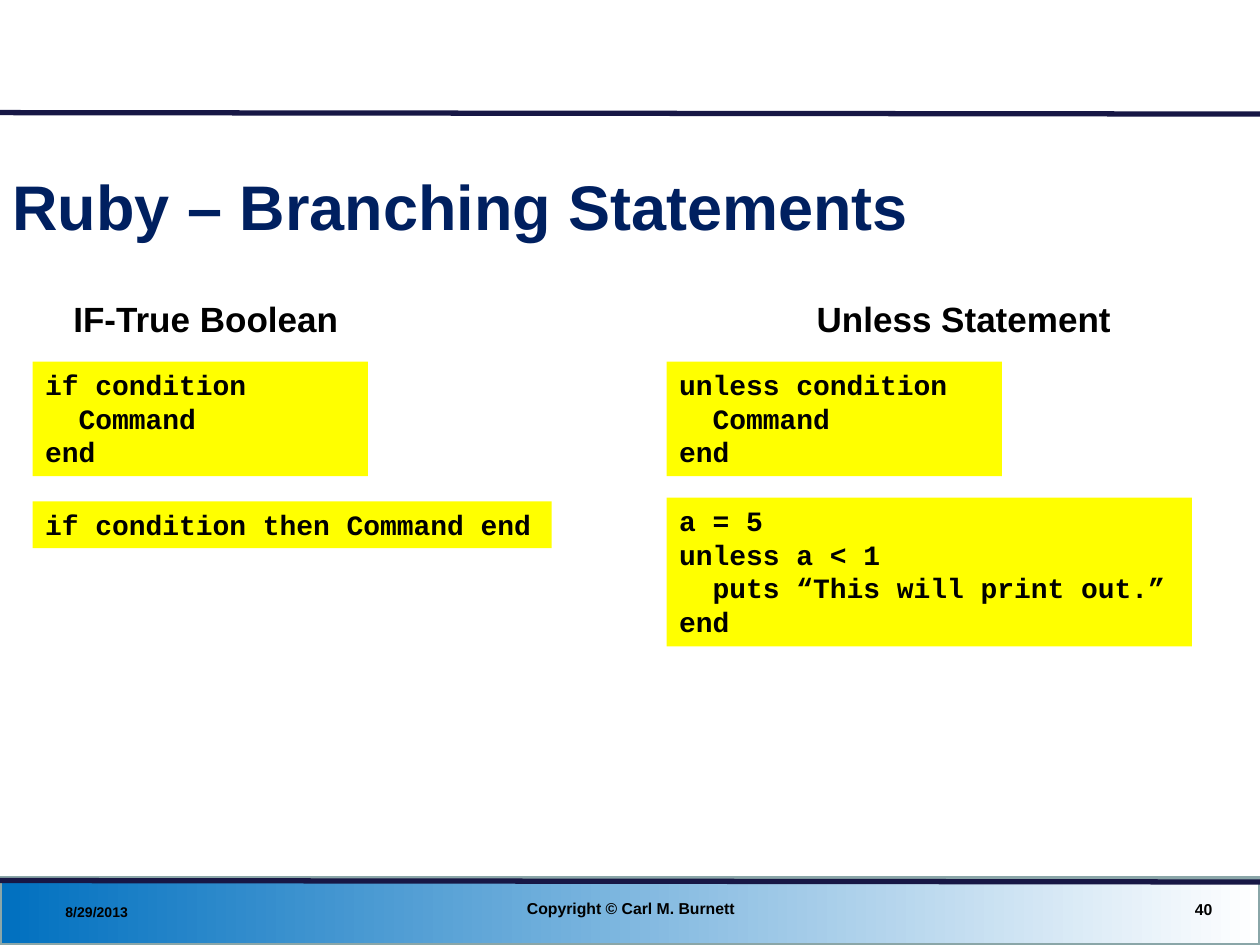
from dataclasses import dataclass

from lxml import etree
from pptx import Presentation
from pptx import util as u
from pptx.dml.color import RGBColor
from pptx.enum import shapes as sh, text as tx
from pptx.oxml.ns import qn

LEFT, MID, RIGHT = tx.PP_ALIGN.LEFT, tx.PP_ALIGN.CENTER, tx.PP_ALIGN.RIGHT
TOP, CENTER = tx.MSO_ANCHOR.TOP, tx.MSO_ANCHOR.MIDDLE
WIDE, HIGH = 25.4, 19.05
COL_A, COL_B = 0.66, 13.44  # left edges of the code columns


@dataclass
class Label:
    words: str
    x: float
    y: float
    w: float
    h: float
    size: float
    align: int = LEFT
    anchor: int = CENTER
    color: str = "000000"
    font: str = "Arial"


@dataclass
class Code:
    words: str
    x: float
    y: float
    w: float
    h: float


def tint(code: str) -> RGBColor:
    return RGBColor.from_string(code)


def write(shape, item: Label) -> None:
    frame = shape.text_frame
    frame.word_wrap = True
    frame.vertical_anchor = item.anchor
    frame.text = item.words
    for para in frame.paragraphs:
        para.alignment = item.align
        for run in para.runs:
            font = run.font
            font.name, font.size, font.bold = item.font, u.Pt(item.size), True
            font.color.rgb = tint(item.color)


def box(slide, x: float, y: float, w: float, h: float):
    shape = slide.shapes.add_shape(
        sh.MSO_SHAPE.RECTANGLE, u.Cm(x), u.Cm(y), u.Cm(w), u.Cm(h))
    shape.shadow.inherit = False
    return shape


def draw_label(slide, item: Label) -> None:
    shape = slide.shapes.add_textbox(
        u.Cm(item.x), u.Cm(item.y), u.Cm(item.w), u.Cm(item.h))
    write(shape, item)


def draw_code(slide, item: Code) -> None:
    shape = box(slide, item.x, item.y, item.w, item.h)
    shape.fill.solid()
    shape.fill.fore_color.rgb = tint("FFFF00")
    shape.line.fill.background()
    write(shape, Label(item.words, item.x, item.y, item.w, item.h, 16,
                       anchor=TOP, font="Courier New"))


def draw_band(slide) -> None:
    band = box(slide, 0, 17.7, WIDE, HIGH - 17.7)
    band.fill.gradient()
    band.fill.gradient_angle = 0
    for stop, pos, code in zip(band.fill.gradient_stops, (0, 1),
                               ("0070C0", "FFFFFF")):
        stop.position = pos
        stop.color.rgb = tint(code)
    band.line.color.rgb = tint("8AA6A8")
    band.line.width = u.Pt(2)


def draw_rule(slide, y: float) -> None:
    rule = slide.shapes.add_connector(
        sh.MSO_CONNECTOR.STRAIGHT, 0, u.Cm(y), u.Cm(WIDE), u.Cm(y + 0.03))
    rule.line.color.rgb = tint("171745")
    rule.line.width = u.Pt(3)
    etree.SubElement(rule._element.spPr, qn("a:effectLst"))


LABELS = [
    Label("Ruby – Branching Statements", 0, 2.9, 24.33, 2.46, 36,
          color="002060"),
    Label("IF-True Boolean", 0.71, 5.87, 6.88, 1.07, 20, MID, TOP),
    Label("Unless Statement", 15.52, 5.87, 7.82, 1.07, 20, MID, TOP),
    # Footer
    Label("8/29/2013", 1.07, 18.03, 5.92, 0.69, 8),
    Label("Copyright © Carl M. Burnett", 8.69, 17.93, 8.05, 0.74, 9, MID),
    Label("40", 18.77, 17.96, 5.92, 0.74, 9, RIGHT),
]

CODES = [
    Code("if condition\n  Command\nend", COL_A, 7.29, 6.76, 2.31),
    Code("if condition then Command end", COL_A, 10.11, 10.46, 0.94),
    Code("unless condition\n  Command\nend", COL_B, 7.29, 6.76, 2.31),
    Code("a = 5\nunless a < 1\n  puts “This will print out.”\nend",
         COL_B, 10.03, 10.59, 3),
]


def main() -> None:
    deck = Presentation()
    deck.slide_width, deck.slide_height = u.Cm(WIDE), u.Cm(HIGH)
    slide = deck.slides.add_slide(deck.slide_layouts[6])

    # Frame: footer band and two rules
    draw_band(slide)
    for y in (17.75, 2.27):
        draw_rule(slide, y)

    # Title, headings and footer
    for item in LABELS:
        draw_label(slide, item)

    # Code samples
    for item in CODES:
        draw_code(slide, item)

    deck.save("out.pptx")


if __name__ == "__main__":
    main()
